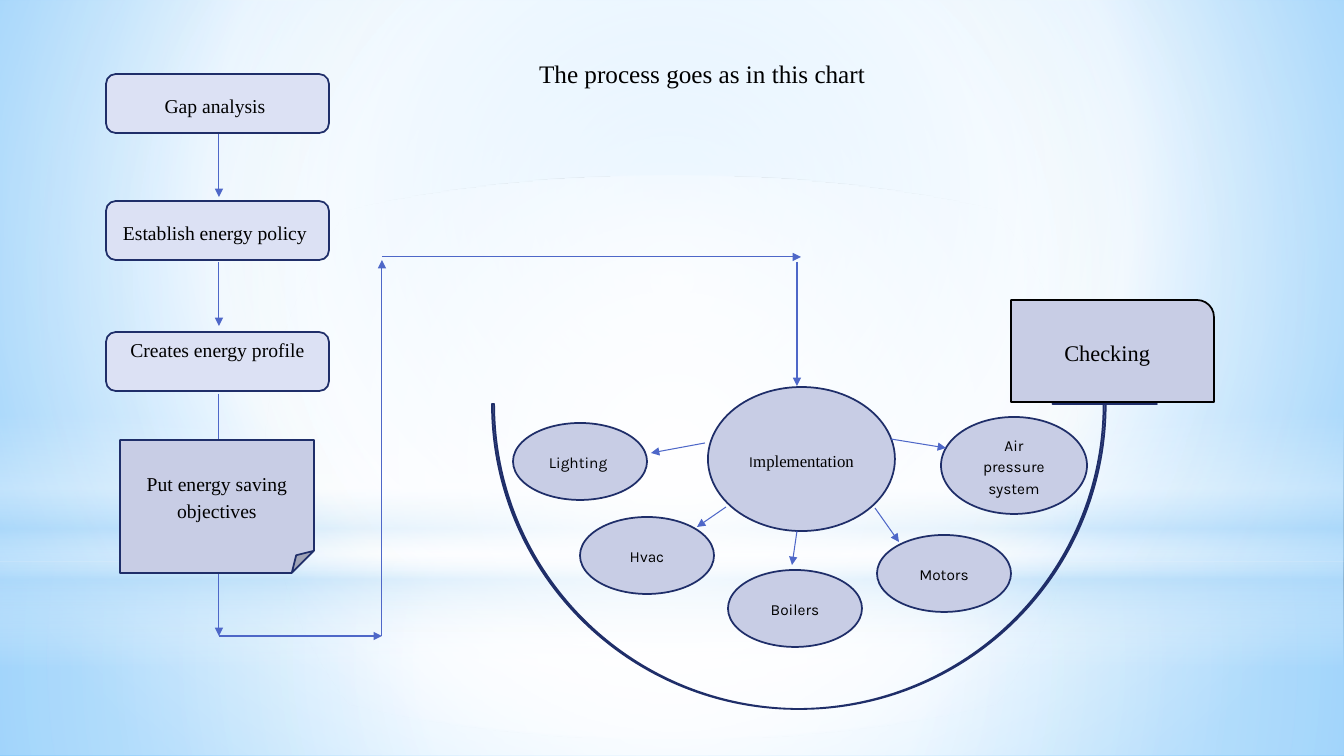
"""Build the energy management process slide."""
from dataclasses import dataclass

import lxml.etree
import pptx
import pptx.dml.color
import pptx.enum.shapes
import pptx.enum.text
import pptx.oxml
import pptx.oxml.ns
import pptx.util

EMU_PER_PX = 12192000 / 1344
SHAPES = pptx.enum.shapes.MSO_SHAPE
ANCHORS = pptx.enum.text.MSO_ANCHOR
ALIGNMENTS = pptx.enum.text.PP_ALIGN


@dataclass(frozen=True)
class Theme:
    step: str = "DCE1F4"
    task: str = "C8CDE5"
    curve: str = "919ACA"
    outline: str = "1F2E69"
    link: str = "4E67C8"
    ink: str = "000000"
    serif: str = "Times New Roman"
    sans: str = "Karla"
    title_size: int = 18
    checking_size: int = 16
    step_size: int = 14
    hub_size: int = 12
    task_size: int = 11
    outline_width: float = 1.25
    link_width: float = 0.75


THEME = Theme()


@dataclass(frozen=True)
class Box:
    left: int
    top: int
    width: int
    height: int


@dataclass(frozen=True)
class TextRun:
    text: str
    size: int = THEME.task_size
    font: str = THEME.sans


@dataclass(frozen=True)
class Node:
    kind: SHAPES
    box: Box
    runs: tuple[TextRun, ...] = ()
    fill: str = THEME.task
    outline: str = THEME.outline
    anchor: ANCHORS = ANCHORS.MIDDLE
    adjustments: tuple[float, ...] = ()


@dataclass(frozen=True)
class Link:
    start: tuple[int, int]
    end: tuple[int, int]


@dataclass(frozen=True)
class Gradient:
    stops: tuple[tuple[int, str, int], ...]
    focus: tuple[int, int, int, int] | None = (50, 50, 50, 50)


@dataclass(frozen=True)
class Glow:
    kind: SHAPES
    box: Box
    gradient: Gradient


BACKGROUND = Gradient(((0, "9ED5FF", 100), (51, "F0F9FF", 100), (60, "FFFFFF", 100),
                       (100, "5BB9FF", 100)), (20, 10, 20, 60))
GLOWS = (
    Glow(SHAPES.RECTANGLE, Box(0, 562, 1344, 194),
         Gradient(((0, "FFFFFF", 91), (37, "FFFFFF", 76), (100, "B4DCFA", 79)))),
    Glow(SHAPES.RECTANGLE, Box(0, 0, 1344, 562),
         Gradient(((0, "FFFFFF", 89), (48, "FFFFFF", 62), (100, "B4DCFA", 79)))),
    Glow(SHAPES.RECTANGLE, Box(0, 415, 1344, 252),
         Gradient(((0, "FFFFFF", 0), (29, "FFFFFF", 30), (45, "B4DCFA", 40),
                   (55, "FFFFFF", 26), (65, "B4DCFA", 60), (100, "FFFFFF", 0)), None)),
    Glow(SHAPES.OVAL, Box(0, 176, 1344, 562),
         Gradient(((0, "FFFFFF", 100), (56, "FFFFFF", 0)))),
)


def step(top: int, text: str, anchor: ANCHORS = ANCHORS.MIDDLE) -> Node:
    return Node(SHAPES.ROUNDED_RECTANGLE, Box(106, top, 223, 59),
                (TextRun(text, THEME.step_size, THEME.serif),), THEME.step, anchor=anchor)


def task(left: int, top: int, text: str, width: int = 134, height: int = 77) -> Node:
    return Node(SHAPES.OVAL, Box(left, top, width, height), (TextRun(text),))


NODES = (
    step(74, "Gap analysis "),
    step(201, "Establish energy policy "),
    step(332, "Creates energy profile", ANCHORS.TOP),
    Node(SHAPES.FOLDED_CORNER, Box(120, 440, 194, 133),
         (TextRun("Put energy saving objectives", THEME.step_size, THEME.serif),)),
    Node(SHAPES.OVAL, Box(708, 387, 187, 144),
         (TextRun("I"), TextRun("mplementation", THEME.hub_size, THEME.serif))),
    task(513, 423, "Lighting "),
    task(580, 517, "Hvac"),
    task(728, 570, "Boilers"),
    task(877, 535, "Motors"),
    task(941, 417, "Air pressure system", 146, 97),
    Node(SHAPES.ROUND_1_RECTANGLE, Box(1011, 300, 203, 102),
         (TextRun("Checking ", THEME.checking_size, THEME.serif),), outline=THEME.ink),
    Node(SHAPES.CURVED_UP_ARROW, Box(492, 404, 665, 305), fill=THEME.curve,
         adjustments=(0.007, 0.343, 0)),
)
FLOW_LINKS = (
    Link((219, 133), (219, 197)),
    Link((219, 262), (219, 326)),
    Link((219, 394), (219, 457)),
    Link((219, 519), (219, 636)),
    Link((219, 636), (382, 636)),
    Link((382, 636), (382, 260)),
    Link((382, 257), (801, 257)),
    Link((797, 262), (797, 386)),
)
TASK_LINKS = (
    Link((705, 443), (651, 453)),
    Link((726, 507), (697, 527)),
    Link((797, 531), (792, 565)),
    Link((875, 508), (899, 542)),
    Link((891, 439), (946, 448)),
)


def px(length: int) -> pptx.util.Emu:
    return pptx.util.Emu(round(length * EMU_PER_PX))


def rgb(colour: str) -> pptx.dml.color.RGBColor:
    return pptx.dml.color.RGBColor.from_string(colour)


def apply_gradient(fill, owner, gradient: Gradient) -> None:
    fill.gradient()
    stops = "".join(
        f'<a:gs pos="{position * 1000}"><a:srgbClr val="{colour}">'
        f'<a:alpha val="{alpha * 1000}"/></a:srgbClr></a:gs>'
        for position, colour, alpha in gradient.stops)
    direction = '<a:lin ang="5400000" scaled="0"/>'
    if gradient.focus:
        sides = " ".join(f'{side}="{value * 1000}"' for side, value in zip("ltrb", gradient.focus))
        direction = f'<a:path path="circle"><a:fillToRect {sides}/></a:path>'
    element = pptx.oxml.parse_xml(
        f'<a:gradFill {pptx.oxml.ns.nsdecls("a")} rotWithShape="1">'
        f"<a:gsLst>{stops}</a:gsLst>{direction}</a:gradFill>")
    current = owner.find(".//" + pptx.oxml.ns.qn("a:gradFill"))
    current.getparent().replace(current, element)


def add_preset(slide, kind: SHAPES, box: Box):
    shape = slide.shapes.add_shape(kind, px(box.left), px(box.top), px(box.width), px(box.height))
    shape.shadow.inherit = False
    return shape


def add_glow(slide, glow: Glow) -> None:
    shape = add_preset(slide, glow.kind, glow.box)
    shape.line.fill.background()
    apply_gradient(shape.fill, shape.element, glow.gradient)


def add_run(paragraph, text_run: TextRun) -> None:
    run = paragraph.add_run()
    run.text = text_run.text
    run.font.size = pptx.util.Pt(text_run.size)
    run.font.name = text_run.font
    run.font.color.rgb = rgb(THEME.ink)


def add_node(slide, node: Node) -> None:
    shape = add_preset(slide, node.kind, node.box)
    for index, value in enumerate(node.adjustments):
        shape.adjustments[index] = value
    shape.fill.solid()
    shape.fill.fore_color.rgb = rgb(node.fill)
    shape.line.color.rgb = rgb(node.outline)
    shape.line.width = pptx.util.Pt(THEME.outline_width)
    frame = shape.text_frame
    frame.word_wrap = True
    frame.vertical_anchor = node.anchor
    if node.anchor == ANCHORS.TOP:
        frame.margin_top = 0
    paragraph = frame.paragraphs[0]
    paragraph.alignment = ALIGNMENTS.CENTER
    paragraph.line_spacing = 1.15
    for text_run in node.runs:
        add_run(paragraph, text_run)


def add_link(slide, link: Link) -> None:
    connector = slide.shapes.add_connector(
        pptx.enum.shapes.MSO_CONNECTOR.STRAIGHT, *map(px, link.start + link.end))
    connector.line.color.rgb = rgb(THEME.link)
    connector.line.width = pptx.util.Pt(THEME.link_width)
    properties = connector.element.spPr
    outline = properties.find(pptx.oxml.ns.qn("a:ln"))
    lxml.etree.SubElement(outline, pptx.oxml.ns.qn("a:tailEnd"), type="triangle")
    lxml.etree.SubElement(properties, pptx.oxml.ns.qn("a:effectLst"))


def place_title(slide, text: str, box: Box) -> None:
    title = slide.shapes.title
    title.left, title.top = px(box.left), px(box.top)
    title.width, title.height = px(box.width), px(box.height)
    frame = title.text_frame
    frame.word_wrap = True
    frame.auto_size = pptx.enum.text.MSO_AUTO_SIZE.SHAPE_TO_FIT_TEXT
    frame.vertical_anchor = ANCHORS.TOP
    paragraph = frame.paragraphs[0]
    paragraph.alignment = ALIGNMENTS.LEFT
    add_run(paragraph, TextRun(text, THEME.title_size, THEME.serif))
    title.element.getparent().append(title.element)


def main() -> None:
    presentation = pptx.Presentation()
    presentation.slide_width, presentation.slide_height = px(1344), px(756)
    slide = presentation.slides.add_slide(presentation.slide_layouts[5])
    apply_gradient(slide.background.fill, slide.element, BACKGROUND)
    for draw, items in ((add_glow, GLOWS), (add_link, FLOW_LINKS),
                        (add_node, NODES), (add_link, TASK_LINKS)):
        for item in items:
            draw(slide, item)
    place_title(slide, "The process goes as in this chart", Box(529, 53, 389, 40))
    presentation.save("out.pptx")


if __name__ == "__main__":
    main()
